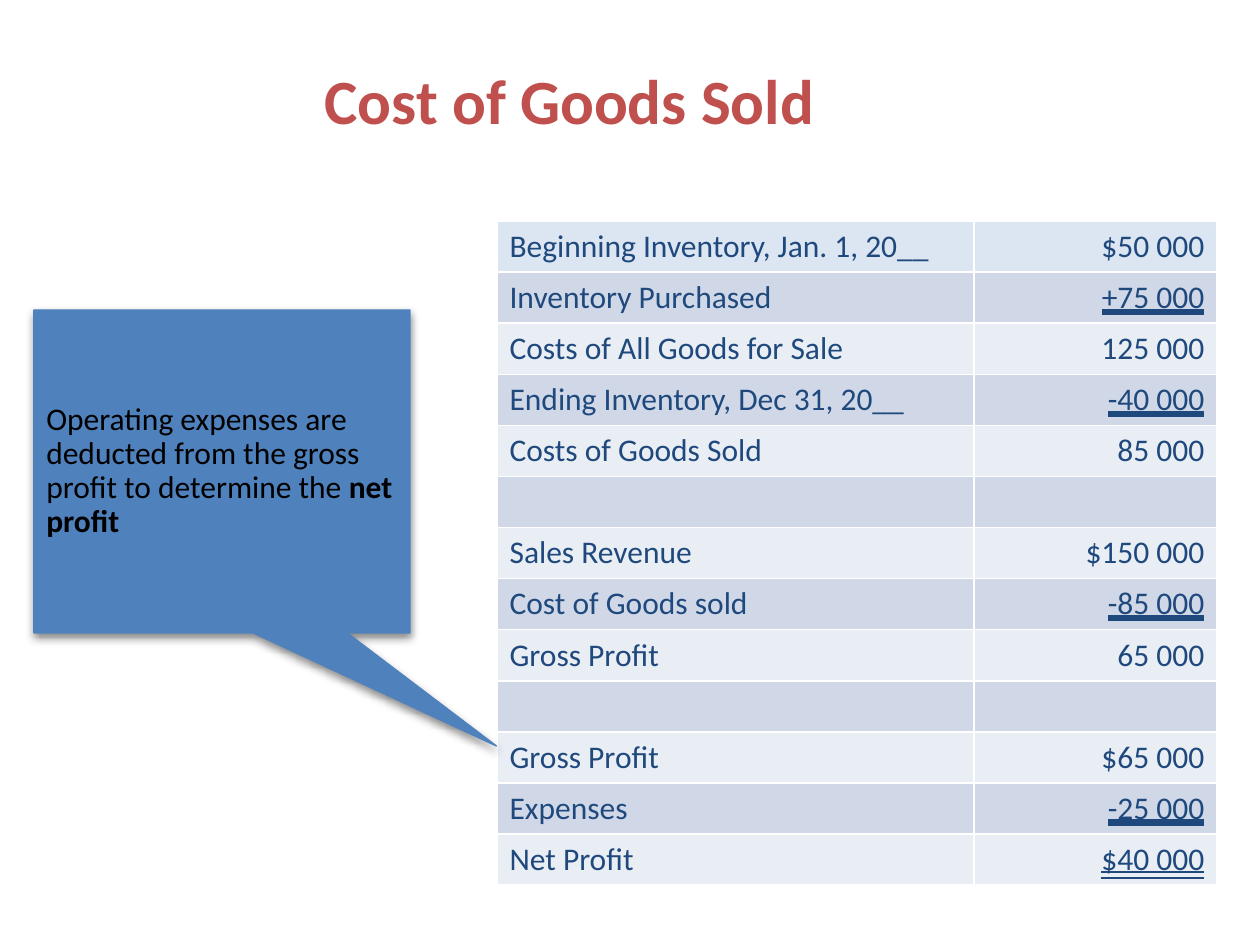
from lxml import etree
from pptx import Presentation
from pptx import util as u
from pptx.dml.color import RGBColor
from pptx.enum import shapes, text
from pptx.oxml import parse_xml
from pptx.oxml.ns import nsdecls, qn

EMU_PER_PX = 914400 / 126
FONT = "Calibri"
COLORS = {
    "title": "C0504D",
    "ink": "1F497D",
    "header": "DCE6F2",
    "dark_band": "D0D8E8",
    "light_band": "E9EDF4",
    "border": "FFFFFF",
    "callout": "4F81BD",
    "black": "000000",
}
HEAVY = text.MSO_UNDERLINE.HEAVY_LINE
DOUBLE = text.MSO_UNDERLINE.DOUBLE_LINE
COLUMN_WIDTHS = (477, 243)
ROW_HEIGHT = 51
STATEMENT = [
    ("Beginning Inventory, Jan. 1, 20__", "$50 000", None),
    ("Inventory Purchased", "+75 000", HEAVY),
    ("Costs of All Goods for Sale", "125 000", None),
    ("Ending Inventory, Dec 31, 20__", "-40 000", HEAVY),
    ("Costs of Goods Sold", "85 000", None),
    ("", "", None),
    ("Sales Revenue", "$150 000", None),
    ("Cost of Goods sold", "-85 000", HEAVY),
    ("Gross Profit", "65 000", None),
    ("", "", None),
    ("Gross Profit", "$65 000", None),
    ("Expenses", "-25 000", HEAVY),
    ("Net Profit", "$40 000", DOUBLE),
]


def px(length):
    return u.Emu(round(length * EMU_PER_PX))


def color(name):
    return RGBColor.from_string(COLORS[name])


def style_font(font, size, name):
    font.name = FONT
    font.size = u.Pt(size)
    font.color.rgb = color(name)


def add_title(page, wording):
    title = page.shapes.title
    title.left, title.top, title.width, title.height = map(px, (34, 35, 1071, 139))
    frame = title.text_frame
    frame.text = wording
    frame.vertical_anchor = text.MSO_ANCHOR.MIDDLE
    para = frame.paragraphs[0]
    para.alignment = text.PP_ALIGN.CENTER
    para.line_spacing = 0.9
    style_font(para.font, 36, "title")
    para.font.bold = True


def set_borders(cell):
    properties = cell._tc.get_or_add_tcPr()
    for index, side in enumerate(("lnL", "lnR", "lnT", "lnB")):
        line = parse_xml(
            f'<a:{side} {nsdecls("a")} w="12700"><a:solidFill>'
            f'<a:srgbClr val="{COLORS["border"]}"/></a:solidFill></a:{side}>'
        )
        properties.insert(index, line)


def fill_cell(cell, wording, band, alignment, underline=None):
    cell.fill.solid()
    cell.fill.fore_color.rgb = color(band)
    set_borders(cell)
    cell.text = wording
    para = cell.text_frame.paragraphs[0]
    para.alignment = alignment
    style_font(para.font, 18, "ink")
    para.font.bold = False
    if underline:
        para.font.underline = underline


def add_statement(page):
    table = page.shapes.add_table(
        len(STATEMENT), 2, px(497), px(221),
        px(sum(COLUMN_WIDTHS)), px(ROW_HEIGHT * len(STATEMENT)),
    ).table
    for column, width in zip(table.columns, COLUMN_WIDTHS):
        column.width = px(width)
    for index, (label, amount, underline) in enumerate(STATEMENT):
        table.rows[index].height = px(ROW_HEIGHT)
        band = "dark_band" if index % 2 else "light_band" if index else "header"
        fill_cell(table.cell(index, 0), label, band, text.PP_ALIGN.LEFT)
        fill_cell(table.cell(index, 1), amount, band, text.PP_ALIGN.RIGHT, underline)


def add_shadow(shape):
    shape.shadow.inherit = False
    effects = shape._element.spPr.find(qn("a:effectLst"))
    shadow = etree.SubElement(
        effects, qn("a:outerShdw"), blurRad=str(u.Pt(5)), dist=str(u.Pt(2.4)),
        dir="5400000", rotWithShape="0",
    )
    shade = etree.SubElement(shadow, qn("a:srgbClr"), val=COLORS["black"])
    etree.SubElement(shade, qn("a:alpha"), val="45000")


def add_callout(page, plain, strong):
    callout = page.shapes.add_shape(
        shapes.MSO_SHAPE.RECTANGULAR_CALLOUT, px(34), px(310), px(376), px(323)
    )
    callout.adjustments[0] = 0.73
    callout.adjustments[1] = 0.85
    callout.fill.solid()
    callout.fill.fore_color.rgb = color("callout")
    callout.line.color.rgb = color("callout")
    callout.line.width = u.Pt(0.79)
    add_shadow(callout)
    frame = callout.text_frame
    frame.word_wrap = True
    frame.vertical_anchor = text.MSO_ANCHOR.MIDDLE
    para = frame.paragraphs[0]
    para.alignment = text.PP_ALIGN.LEFT
    para.line_spacing = 0.9
    para.space_before = u.Pt(4)
    style_font(para.font, 18, "black")
    for wording, bold in ((plain, False), (strong, True)):
        span = para.add_run()
        span.text = wording
        span.font.bold = bold


def main():
    deck = Presentation()
    deck.slide_width, deck.slide_height = px(1260), px(945)
    page = deck.slides.add_slide(deck.slide_layouts[5])
    add_title(page, "Cost of Goods Sold")
    add_statement(page)
    add_callout(
        page,
        "Operating expenses are deducted from the gross profit to determine the",
        " net profit",
    )
    deck.save("out.pptx")


if __name__ == "__main__":
    main()
